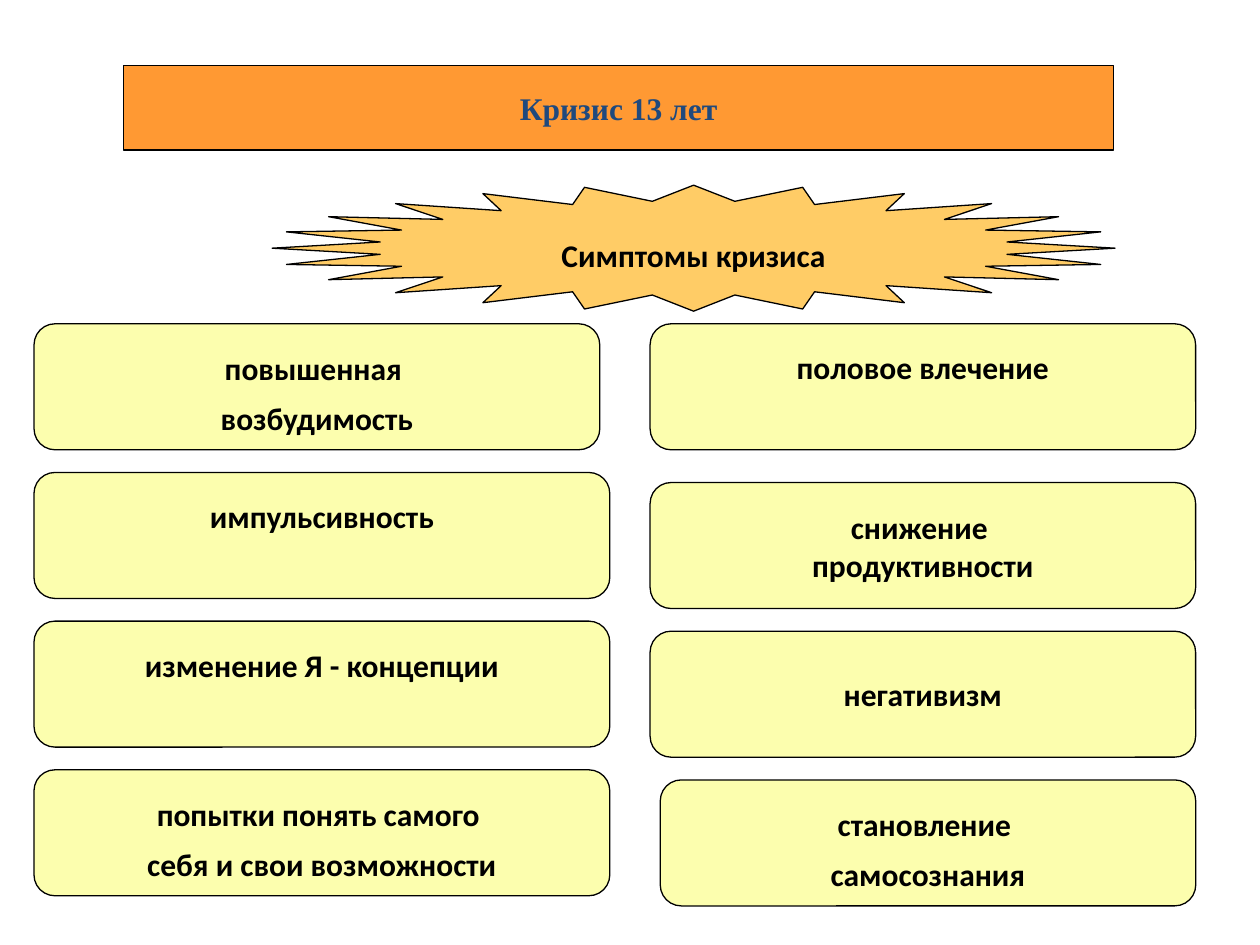
from lxml.etree import SubElement
from pptx import Presentation
from pptx.dml.color import RGBColor
from pptx.enum.shapes import MSO_SHAPE
from pptx.enum.text import MSO_ANCHOR, MSO_AUTO_SIZE, PP_ALIGN
from pptx.oxml.ns import qn
from pptx.util import Inches, Pt

COLORS = {
    "ribbon": "FF9933",
    "star": "FFCC66",
    "card": "FCFEAE",
    "line": "000000",
    "text": "000000",
    "title": "1F497D",
}
CARD_HEIGHT = 1
CARD_STEP = 1.18
TOP_ROW = 2.57
LEFT_EDGE = 0.27
RIGHT_EDGE = 9.49
INSET = 0.05
LOWERED = (0.15, INSET)
RAISED = (INSET, 0.36)
CENTERED = (INSET, INSET)


class SlideBuilder:
    font_size = Pt(18)
    line_width = Pt(0.75)

    def __init__(self, presentation):
        layout = presentation.slide_layouts.get_by_name("Title Only")
        self.slide = presentation.slides.add_slide(layout)

    def color(self, name):
        return RGBColor.from_string(COLORS[name])

    def paint(self, shape, fill):
        shape.fill.solid()
        shape.fill.fore_color.rgb = self.color(fill)
        shape.line.color.rgb = self.color("line")
        shape.line.width = self.line_width

    def add_lines(self, shape, lines, insets, gap=0, font="Calibri", color="text"):
        frame = shape.text_frame
        frame.word_wrap = False
        frame.auto_size = MSO_AUTO_SIZE.NONE
        frame.vertical_anchor = MSO_ANCHOR.MIDDLE
        frame.margin_top, frame.margin_bottom = map(Inches, insets)
        for index, line in enumerate(lines):
            paragraph = frame.add_paragraph() if index else frame.paragraphs[0]
            paragraph.alignment = PP_ALIGN.CENTER
            paragraph.space_before = Pt(gap if index else 0)
            run = paragraph.add_run()
            run.text = line
            run.font.name = font
            run.font.size = self.font_size
            run.font.bold = True
            run.font.color.rgb = self.color(color)

    def title_ribbon(self, text, left, top, width, height):
        title = self.slide.shapes.title
        title.left, title.top = Inches(left), Inches(top)
        title.width, title.height = Inches(width), Inches(height)
        geometry = SubElement(title.element.spPr, qn("a:prstGeom"), prst="ribbon")
        guides = SubElement(geometry, qn("a:avLst"))
        for name, value in (("adj1", 12500), ("adj2", 50000)):
            SubElement(guides, qn("a:gd"), name=name, fmla=f"val {value}")
        self.paint(title, "ribbon")
        self.add_lines(title, [text], CENTERED, font="Times New Roman", color="title")

    def box(self, preset, fill, lines, left, top, width, height, insets, gap=0):
        shape = self.slide.shapes.add_shape(
            preset, Inches(left), Inches(top), Inches(width), Inches(height)
        )
        shape.shadow.inherit = False
        self.paint(shape, fill)
        self.add_lines(shape, lines, insets, gap)

    def star(self, text, left, top, width, height):
        self.box(MSO_SHAPE.STAR_24_POINT, "star", [text],
                 left, top, width, height, LOWERED)

    def card(self, lines, left, top, width, insets, gap):
        self.box(MSO_SHAPE.ROUNDED_RECTANGLE, "card", lines,
                 left, top, width, CARD_HEIGHT, insets, gap)


def main():
    presentation = Presentation()
    presentation.slide_width = Inches(10)
    presentation.slide_height = Inches(7.5)
    builder = SlideBuilder(presentation)

    builder.title_ribbon("Кризис 13 лет", 0.98, 0.52, 7.86, 0.67)
    builder.star("Симптомы кризиса", 2.16, 1.47, 6.69, 1)

    left_cards = [
        (["повышенная ", "возбудимость"], 4.49, LOWERED),
        (["импульсивность"], 4.57, RAISED),
        (["изменение Я - концепции"], 4.57, RAISED),
        (["попытки понять самого ", "себя и свои возможности"], 4.57, LOWERED),
    ]
    for row, (lines, width, insets) in enumerate(left_cards):
        builder.card(lines, LEFT_EDGE, TOP_ROW + row * CARD_STEP, width, insets, 7)

    right_cards = [
        (["половое влечение"], 4.33, RAISED, 0),
        (["снижение ", "продуктивности"], 4.33, CENTERED, 0),
        (["негативизм"], 4.33, CENTERED, 0),
        (["становление ", "самосознания"], 4.25, LOWERED, 7),
    ]
    for row, (lines, width, insets, gap) in enumerate(right_cards):
        top = TOP_ROW + row * CARD_STEP + (0.08 if row else 0)
        builder.card(lines, RIGHT_EDGE - width, top, width, insets, gap)

    presentation.save("out.pptx")


if __name__ == "__main__":
    main()
